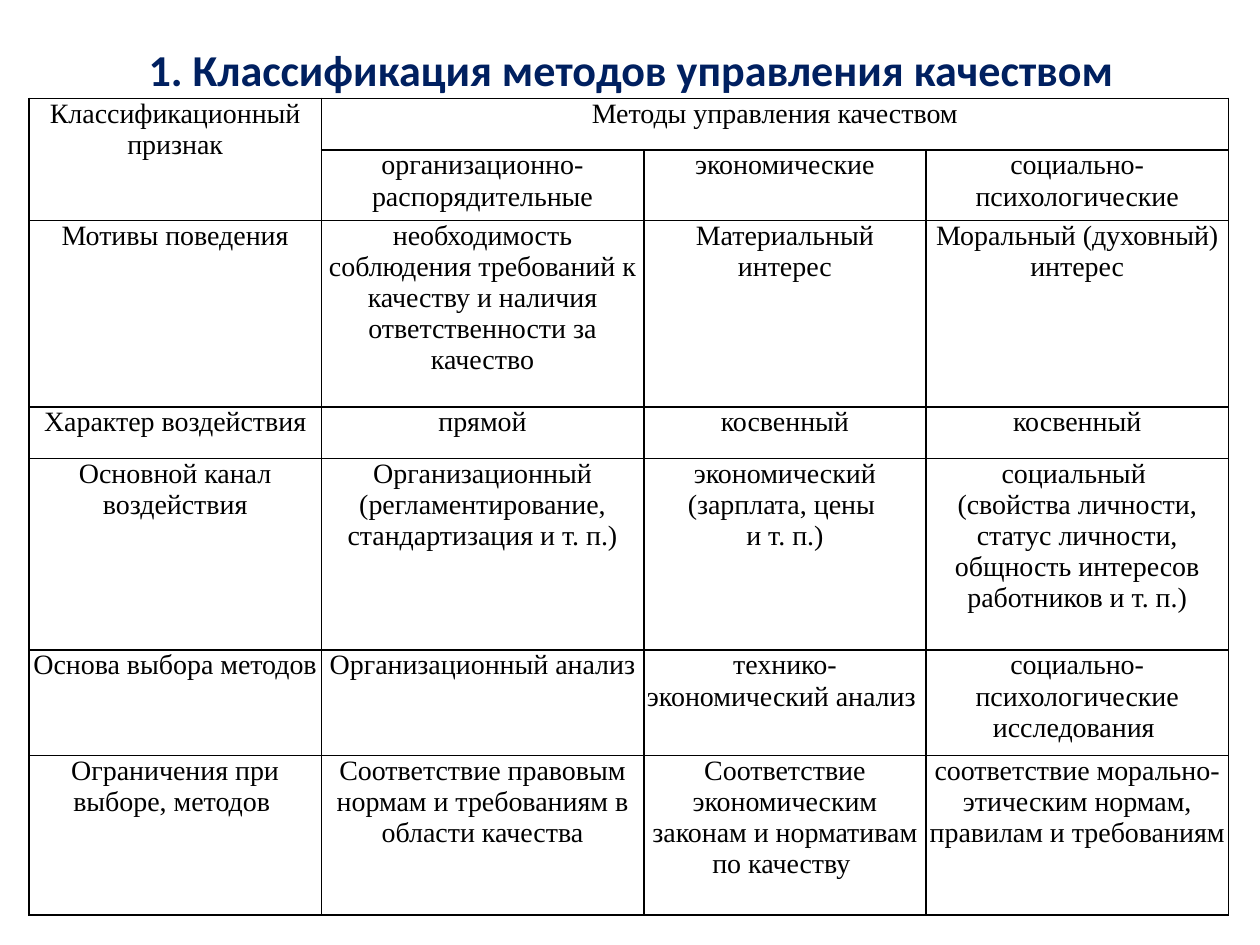
from lxml import etree
from pptx import Presentation
from pptx.dml.color import RGBColor
from pptx.enum.text import MSO_ANCHOR, MSO_AUTO_SIZE, PP_ALIGN
from pptx.oxml.ns import qn
from pptx.util import Pt

CENTER = PP_ALIGN.CENTER
TOP = MSO_ANCHOR.TOP
MIDDLE = MSO_ANCHOR.MIDDLE
NO_AUTOFIT = MSO_AUTO_SIZE.NONE
NAVY = RGBColor(0x00, 0x20, 0x60)
BLACK = RGBColor(0x00, 0x00, 0x00)

COL_WIDTHS = [167, 184.3, 161.3, 172.8]
ROW_HEIGHTS = [29.5, 40.3, 106.6, 29.5, 109.4, 60.2, 91.4]
ROWS = [
    ["Классификационный признак", "Методы управления качеством", "", ""],
    ["", "организационно-\vраспорядительные", "экономические",
     "социально-\vпсихологические"],
    ["Мотивы поведения",
     "необходимость соблюдения требований к качеству и наличия ответственности за качество",
     "Материальный интерес", "Моральный (духовный) интерес"],
    ["Характер воздействия", "прямой", "косвенный", "косвенный"],
    ["Основной канал\vвоздействия",
     "Организационный (регламентирование, стандартизация и т. п.)",
     "экономический (зарплата, цены \nи т. п.)",
     "социальный \n(свойства личности, статус личности, общность интересов работников и т. п.)"],
    ["Основа выбора методов", "Организационный анализ",
     "технико-экономический анализ ",
     "социально- психологические исследования "],
    ["Ограничения при выборе, методов ",
     "Соответствие правовым нормам и требованиям в области качества",
     "Соответствие экономическим законам и нормативам по качеству ",
     "соответствие морально-этическим нормам, правилам и требованиям "],
]


def set_borders(cell):
    tcPr = cell._tc.get_or_add_tcPr()
    for side in ("lnL", "lnR", "lnT", "lnB"):
        ln = etree.SubElement(tcPr, qn(f"a:{side}"), w=str(Pt(1)))
        fill = etree.SubElement(ln, qn("a:solidFill"))
        etree.SubElement(fill, qn("a:srgbClr"), val=str(BLACK))


def format_paragraph(p, name, size, color, bold=False):
    p.alignment = CENTER
    p.font.name = name
    p.font.size = Pt(size)
    p.font.color.rgb = color
    p.font.bold = bold


prs = Presentation()
prs.slide_width, prs.slide_height = Pt(720), Pt(540)
s = prs.slides.add_slide(prs.slide_layouts[5])

title = s.shapes.title
title.left, title.top, title.width, title.height = Pt(33.8), Pt(22.3), Pt(653.8), Pt(33.8)
tf = title.text_frame
tf.text = "1. Классификация методов управления качеством"
tf.auto_size = NO_AUTOFIT
tf.vertical_anchor = MIDDLE
format_paragraph(tf.paragraphs[0], "Calibri", 25.2, NAVY, True)

table = s.shapes.add_table(len(ROWS), len(COL_WIDTHS), Pt(16.6), Pt(56.2),
                           Pt(sum(COL_WIDTHS)), Pt(sum(ROW_HEIGHTS))).table
table.first_row = False
table.horz_banding = False
for column, width in zip(table.columns, COL_WIDTHS):
    column.width = Pt(width)
for row, height, texts in zip(table.rows, ROW_HEIGHTS, ROWS):
    row.height = Pt(height)
    for cell, text in zip(row.cells, texts):
        cell.text = text
        cell.margin_left = cell.margin_right = Pt(1.5)
        cell.margin_top = cell.margin_bottom = Pt(0)
        cell.vertical_anchor = TOP
        set_borders(cell)
        cell.fill.background()
        for p in cell.text_frame.paragraphs:
            format_paragraph(p, "Times New Roman", 16, BLACK)

table.cell(0, 0).merge(table.cell(1, 0))
table.cell(0, 1).merge(table.cell(0, 3))

prs.save("out.pptx")
